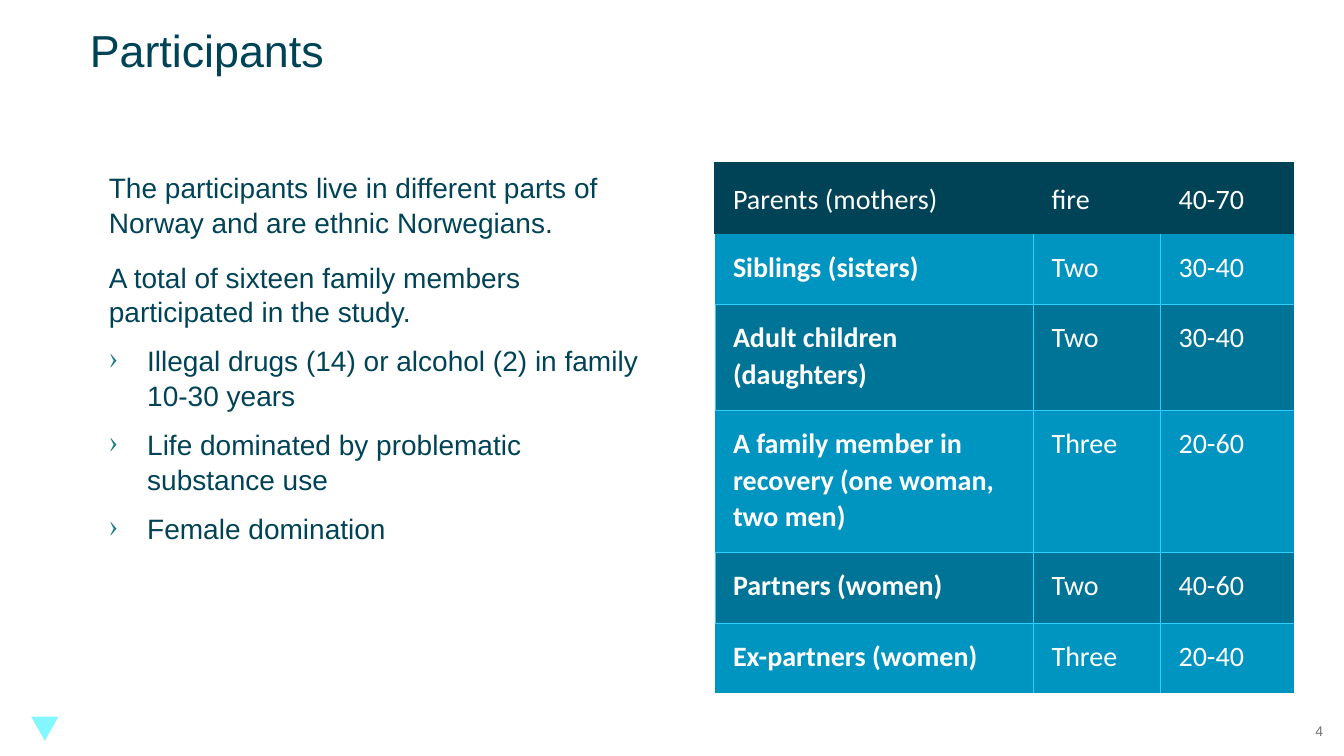
from pptx import Presentation, util as u
from pptx.dml.color import RGBColor
from pptx.enum import shapes, text
from pptx.oxml import parse_xml
from pptx.oxml.ns import nsdecls

NAVY = RGBColor(0x00, 0x43, 0x57)
TEAL = RGBColor(0x00, 0x74, 0x96)
BLUE = RGBColor(0x00, 0x94, 0xC1)
SKY = RGBColor(0x2C, 0xCE, 0xFF)
AQUA = RGBColor(0x83, 0xF7, 0xFF)
BULLET = RGBColor(0x1B, 0x7C, 0x83)
GREY = RGBColor(0x73, 0x73, 0x73)
WHITE = RGBColor(0xFF, 0xFF, 0xFF)
NO_STYLE = "{2D5ABB26-0587-4C30-8999-92F81FD0307C}"


def add_text(left, top, width, height, lines, size, color, inset=0):
    box = slide.shapes.add_textbox(*map(u.Inches, (left, top, width, height)))
    frame = box.text_frame
    frame.word_wrap = True
    frame.margin_left = frame.margin_right = u.Inches(inset)
    frame.margin_top = frame.margin_bottom = u.Inches(inset)
    frame.text = "\n".join(lines)
    for paragraph in frame.paragraphs:
        for run in paragraph.runs:
            run.font.name = "Arial"
            run.font.size = u.Pt(size)
            run.font.color.rgb = color
    return frame


def add_border(cell, side, color, points):
    properties = cell._tc.get_or_add_tcPr()
    properties.append(parse_xml(
        f'<a:{side} {nsdecls("a")} w="{u.Pt(points)}"><a:solidFill>'
        f'<a:srgbClr val="{color}"/></a:solidFill></a:{side}>'))


presentation = Presentation()
presentation.slide_width = u.Inches(13.33)
presentation.slide_height = u.Inches(7.5)
slide = presentation.slides.add_slide(presentation.slide_layouts[6])

emblem = slide.shapes.add_shape(
    shapes.MSO_SHAPE.FLOWCHART_MERGE,
    u.Inches(0.31), u.Inches(7.11), u.Inches(0.27), u.Inches(0.24))
emblem.shadow.inherit = False
emblem.fill.solid()
emblem.fill.fore_color.rgb = AQUA
emblem.line.fill.background()

title = add_text(0.89, 0, 11.95, 1.48, ["Participants"], 32, NAVY)
title.vertical_anchor = text.MSO_ANCHOR.MIDDLE
title.margin_bottom = u.Inches(0.49)

body = add_text(0.88, 1.48, 5.75, 5.53, [
    "The participants live in different parts of Norway and are ethnic Norwegians.",
    "A total of sixteen family members participated in the study.",
    "Illegal drugs (14) or alcohol (2) in family 10-30 years",
    "Life dominated by problematic substance use",
    "Female domination",
], 20, NAVY, 0.2)
for paragraph in body.paragraphs:
    paragraph.line_spacing = 1.04
body.paragraphs[1].space_before = u.Pt(14)
for paragraph in body.paragraphs[2:]:
    paragraph.space_before = u.Pt(10)
    properties = paragraph._p.get_or_add_pPr()
    properties.set("marL", str(u.Inches(0.38)))
    properties.set("indent", str(-u.Inches(0.38)))
    properties.append(parse_xml(
        f'<a:buClr {nsdecls("a")}><a:srgbClr val="{BULLET}"/></a:buClr>'))
    properties.append(parse_xml(f'<a:buChar {nsdecls("a")} char="›"/>'))

number = add_text(12.84, 7.01, 0.49, 0.49, ["4"], 10, GREY)
number.vertical_anchor = text.MSO_ANCHOR.MIDDLE
number.paragraphs[0].alignment = text.PP_ALIGN.CENTER

groups = [
    ("Parents (mothers)", "fire", "40-70"),
    ("Siblings (sisters)", "Two", "30-40"),
    ("Adult children (daughters)", "Two", "30-40"),
    ("A family member in recovery (one woman, two men)", "Three", "20-60"),
    ("Partners (women)", "Two", "40-60"),
    ("Ex-partners (women)", "Three", "20-40"),
]
table_shape = slide.shapes.add_table(
    len(groups), 3, u.Inches(7.09), u.Inches(1.62), u.Inches(5.75), u.Inches(5.24))
table = table_shape.table
table._tbl.tblPr.find("{*}tableStyleId").text = NO_STYLE
table.horz_banding = False
for column, width in zip(table.columns, (3.16, 1.26, 1.32)):
    column.width = u.Inches(width)
for row, height in zip(table.rows, (0.7, 0.7, 1.05, 1.41, 0.7, 0.7)):
    row.height = u.Inches(height)

for r, group in enumerate(groups):
    for c, value in enumerate(group):
        cell = table.cell(r, c)
        cell.margin_left = u.Inches(0.18)
        cell.margin_right = u.Inches(0.25)
        cell.margin_top = cell.margin_bottom = u.Inches(0.14)
        cell.text = value
        paragraph = cell.text_frame.paragraphs[0]
        paragraph.line_spacing = 1.07
        paragraph.space_after = u.Pt(8)
        font = paragraph.runs[0].font
        font.name = "Calibri"
        font.size = u.Pt(20)
        font.bold = r > 0 and c == 0
        font.color.rgb = WHITE
        if r == 0:
            cell.vertical_anchor = text.MSO_ANCHOR.MIDDLE
            if c == 0:
                add_border(cell, "lnL", NAVY, 1.5)
            add_border(cell, "lnT", NAVY, 1.5)
        else:
            if c > 0 or r % 2 == 0:
                add_border(cell, "lnL", SKY, 0.5)
            if c < 2:
                add_border(cell, "lnR", SKY, 0.5)
            if r in (2, 4):
                add_border(cell, "lnT", SKY, 0.5)
            if r in (1, 3):
                add_border(cell, "lnB", SKY, 0.5)
        cell.fill.solid()
        cell.fill.fore_color.rgb = NAVY if r == 0 else BLUE if r % 2 else TEAL

presentation.save("out.pptx")
